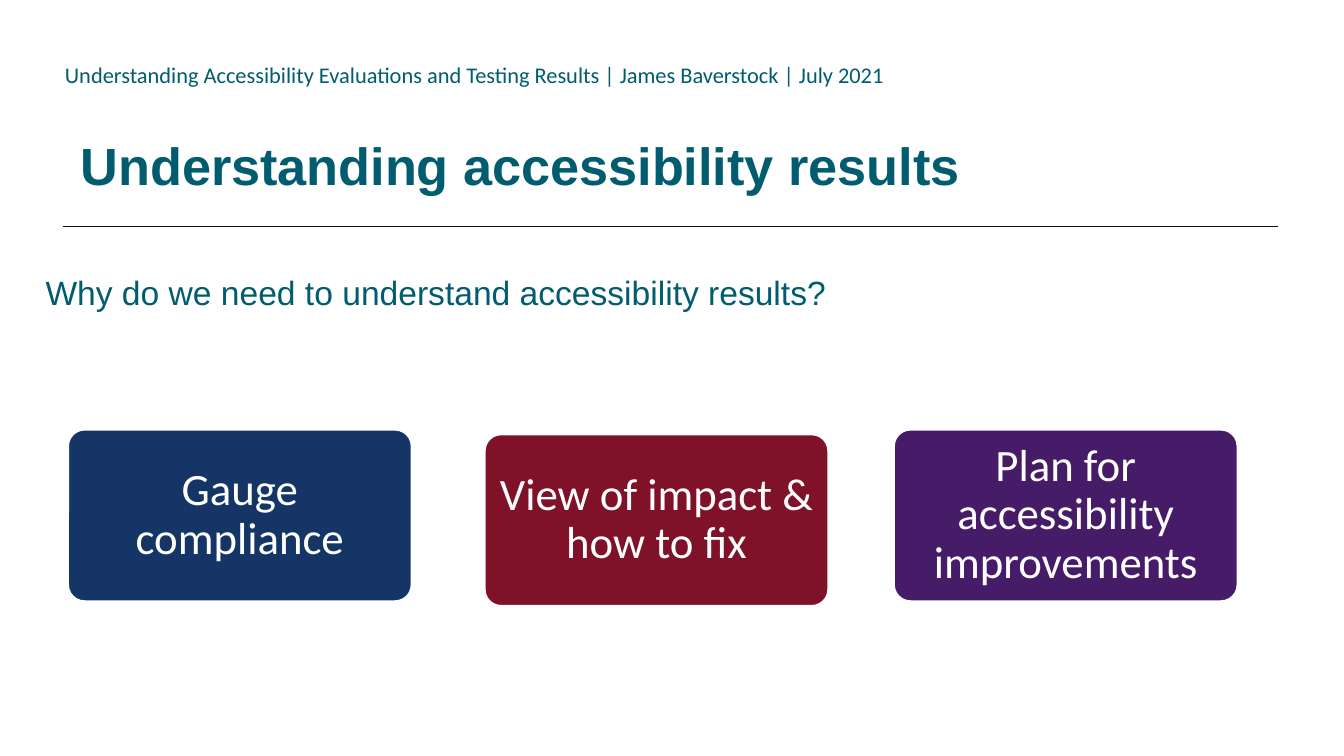
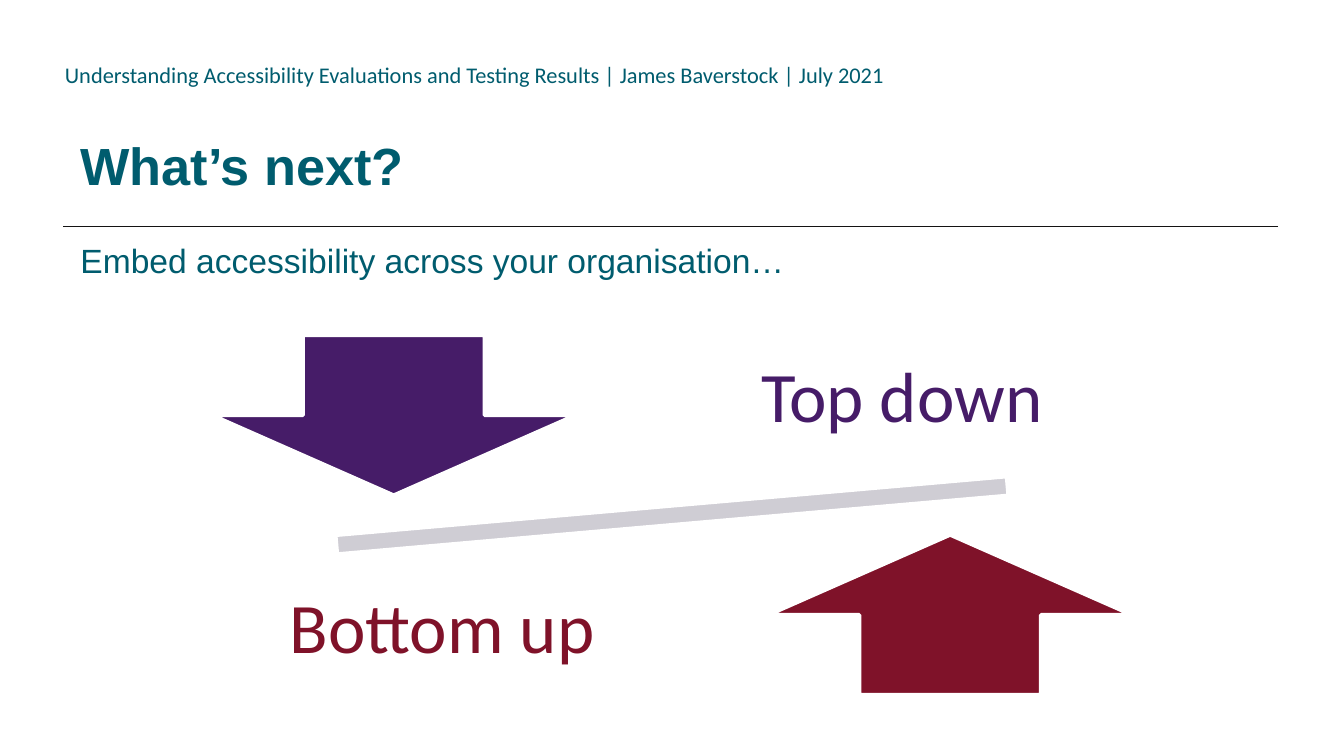
from lxml import etree
from pptx import Presentation
from pptx.dml.color import RGBColor
from pptx.enum.shapes import MSO_CONNECTOR, MSO_SHAPE as SHAPE
from pptx.enum.text import MSO_ANCHOR as ANCHOR, MSO_AUTO_SIZE as AUTO_SIZE, PP_ALIGN as ALIGN
from pptx.oxml.ns import qn
from pptx.util import Emu, Pt

TEAL = RGBColor(0x00, 0x5C, 0x6E)
NAVY = RGBColor(0x15, 0x35, 0x66)
CRIMSON = RGBColor(0x7F, 0x12, 0x29)
PURPLE = RGBColor(0x46, 0x1C, 0x68)
GREY = RGBColor(0xCF, 0xCD, 0xD4)
INK = RGBColor(0x14, 0x13, 0x13)
WHITE = RGBColor(0xFF, 0xFF, 0xFF)

HEADER = "Understanding Accessibility Evaluations and Testing Results | James Baverstock | July 2021"
RESULTS = {
    "title": "Understanding accessibility results",
    "lead": "Why do we need to understand accessibility results?",
    "lead_box": (48, 395, 1902, 730),
}
NEXT = {
    "title": "What’s next?",
    "lead": "Embed accessibility across your organisation…",
    "lead_box": (100, 347, 1804, 718),
}
REASONS = [
    ("Gauge compliance", NAVY, 100, 638),
    ("View of impact & how to fix", CRIMSON, 720, 645),
    ("Plan for accessibility improvements", PURPLE, 1329, 638),
]
DIRECTIONS = [
    ("Top down", PURPLE, SHAPE.DOWN_ARROW, (316, 499), (1054, 470)),
    ("Bottom up", CRIMSON, SHAPE.UP_ARROW, (1144, 796), (370, 814)),
]
SLIDE_SIZE = (2000, 1125)
CARD_SIZE = (514, 258)
ARROW_SIZE = (540, 238)
LABEL_SIZE = (576, 250)
SEESAW_BOX = (318, 707, 1364, 120)
SEESAW_ANGLE = 355

PX_PER_INCH = 200


def px(value):
    return Emu(value * 914400 // PX_PER_INCH)


def scaled(box):
    return [px(value) for value in box]


def write(shape, text, size, color, font="Calibri", bold=False):
    frame = shape.text_frame
    frame.text = text
    frame.word_wrap = True
    paragraph = frame.paragraphs[0]
    style = paragraph.runs[0].font
    style.name, style.size, style.bold = font, Pt(size), bold
    style.color.rgb = color
    return paragraph


def center(shape, margin_x, margin_y):
    frame = shape.text_frame
    frame.vertical_anchor = ANCHOR.MIDDLE
    frame.margin_left = frame.margin_right = px(margin_x)
    frame.margin_top = frame.margin_bottom = px(margin_y)
    paragraph = frame.paragraphs[0]
    paragraph.alignment = ALIGN.CENTER
    paragraph.line_spacing = 0.9


def add_block(slide, kind, box, color):
    shape = slide.shapes.add_shape(kind, *scaled(box))
    shape.shadow.inherit = False
    shape.fill.solid()
    shape.fill.fore_color.rgb = color
    shape.line.color.rgb = WHITE
    shape.line.width = Pt(2)
    return shape


def add_slide(presentation, content):
    slide = presentation.slides.add_slide(presentation.slide_layouts[5])
    header = slide.shapes.add_textbox(*scaled((77, 81, 1328, 60)))
    write(header, HEADER, 12, TEAL)
    header.text_frame.auto_size = AUTO_SIZE.SHAPE_TO_FIT_TEXT

    rule = slide.shapes.add_connector(MSO_CONNECTOR.STRAIGHT, *scaled((1902, 337, 94, 337)))
    rule.line.color.rgb = INK
    rule.line.width = Pt(0.5)
    etree.SubElement(rule.element.spPr, qn("a:effectLst"))

    title = slide.shapes.title
    title.left, title.top, title.width, title.height = scaled((100, 125, 1800, 176))
    write(title, content["title"], 28, TEAL, "Arial", True).alignment = ALIGN.LEFT
    title.text_frame.auto_size = AUTO_SIZE.NONE
    title.text_frame.vertical_anchor = ANCHOR.BOTTOM

    lead = slide.shapes.add_textbox(*scaled(content["lead_box"]))
    write(lead, content["lead"], 18, TEAL, "Arial").space_after = Pt(6)
    return slide


def build_results(presentation):
    slide = add_slide(presentation, RESULTS)
    for text, color, left, top in REASONS:
        card = add_block(slide, SHAPE.ROUNDED_RECTANGLE, (left, top, *CARD_SIZE), color)
        card.adjustments[0] = 0.1
        write(card, text, 24, WHITE)
        center(card, 10, 6)


def build_next(presentation):
    slide = add_slide(presentation, NEXT)
    seesaw = add_block(slide, SHAPE.MATH_MINUS, SEESAW_BOX, GREY)
    seesaw.rotation = SEESAW_ANGLE
    for text, color, kind, arrow_at, label_at in DIRECTIONS:
        add_block(slide, kind, (*arrow_at, *ARROW_SIZE), color)
        label = slide.shapes.add_textbox(*scaled((*label_at, *LABEL_SIZE)))
        write(label, text, 38, color)
        center(label, 40, 60)


def main():
    presentation = Presentation()
    presentation.slide_width, presentation.slide_height = scaled(SLIDE_SIZE)
    build_results(presentation)
    build_next(presentation)
    presentation.save("out.pptx")


if __name__ == "__main__":
    main()
